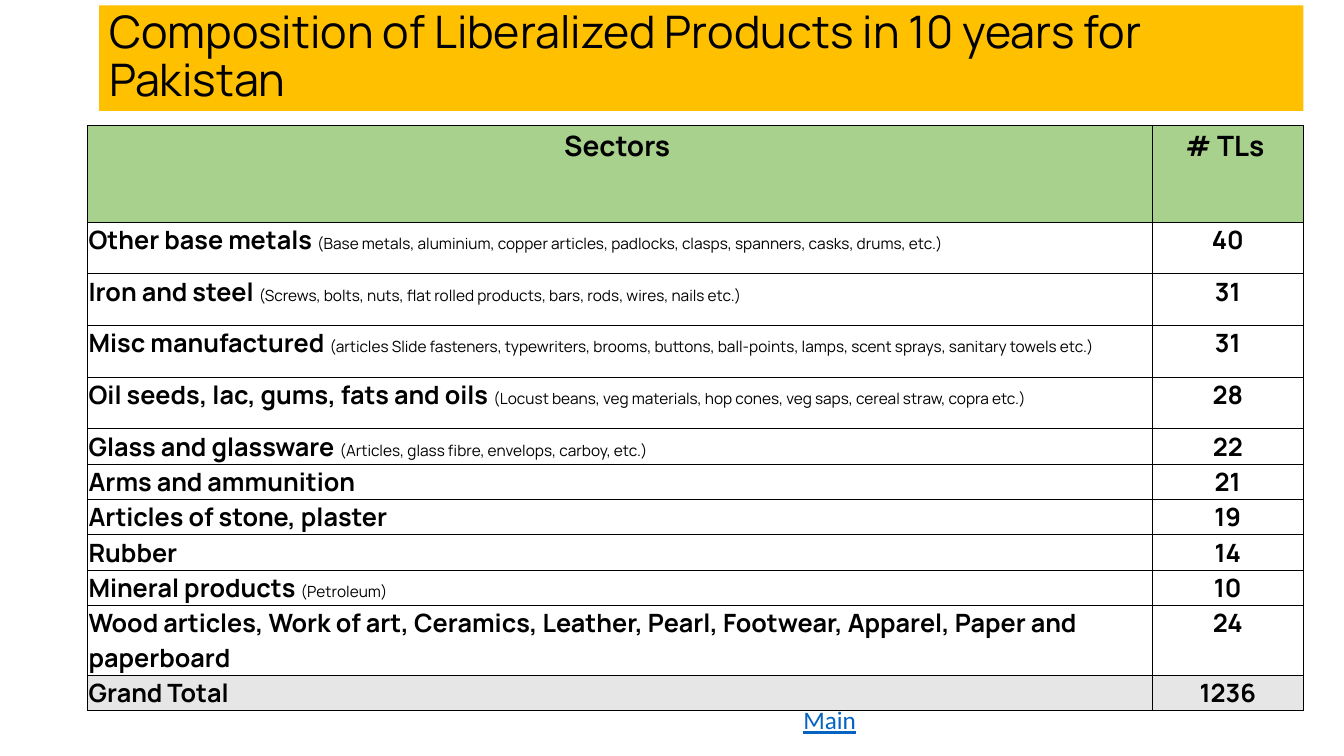
from dataclasses import dataclass

from lxml.etree import SubElement
from pptx import Presentation
from pptx.dml.color import RGBColor
from pptx.enum.shapes import MSO_SHAPE as SHAPE
from pptx.enum.text import MSO_ANCHOR as ANCHOR, MSO_AUTO_SIZE as FIT, PP_ALIGN as ALIGN
from pptx.oxml.ns import qn
from pptx.util import Pt

COLORS = {
    "title": "FFC000",
    "header": "A9D18E",
    "total": "E7E6E6",
    "ink": "000000",
    "link": "0563C1",
}
HEADING, BODY = "Manrope", "Calibri"
TALL, SHORT = 36.9, 23
CELL_FORMAT = {
    "margin_left": Pt(0.6),
    "margin_right": Pt(0.6),
    "margin_top": Pt(0.6),
    "margin_bottom": Pt(0),
    "vertical_anchor": ANCHOR.TOP,
}


@dataclass
class Row:
    sector: str
    lines: str
    detail: str = ""
    height: float = SHORT
    size: float = 18
    fill: str = ""
    align: ALIGN = ALIGN.LEFT


ROWS = [
    Row("Sectors ", "# TLs ", height=69, size=20, fill="header", align=ALIGN.CENTER),
    Row("Other base metals ", "40",
        "(Base metals, aluminium, copper articles, padlocks, clasps, spanners, casks, drums, etc.)", TALL),
    Row("Iron and steel ", "31",
        "(Screws, bolts, nuts, flat rolled products, bars, rods, wires, nails etc.)", TALL),
    Row("Misc manufactured ", "31",
        "(articles Slide fasteners, typewriters, brooms, buttons, ball-points, lamps, "
        "scent sprays, sanitary towels etc.)", TALL),
    Row("Oil seeds, lac, gums, fats and oils ", "28",
        "(Locust beans, veg materials, hop cones, veg saps, cereal straw, copra etc.)", TALL),
    Row("Glass and glassware ", "22", "(Articles, glass fibre, envelops, carboy, etc.)"),
    Row("Arms and ammunition", "21"),
    Row("Articles of stone, plaster", "19"),
    Row("Rubber", "14"),
    Row("Mineral products ", "10", "(Petroleum)"),
    Row("Wood articles, Work of art, Ceramics, Leather, Pearl, Footwear, Apparel, "
        "Paper and paperboard", "24", height=2 * SHORT),
    Row("Grand Total", "1236", fill="total"),
]


def apply(obj, values: dict) -> None:
    for name, value in values.items():
        setattr(obj, name, value)


def rgb(name: str) -> RGBColor:
    return RGBColor.from_string(COLORS[name])


def add_run(p, text: str, size: float, color: str = "ink", **fmt) -> None:
    r = p.add_run()
    r.text = text
    apply(r.font, {"name": HEADING, "size": Pt(size), **fmt})
    r.font.color.rgb = rgb(color)


def add_borders(cell) -> None:
    tcPr = cell._tc.get_or_add_tcPr()
    for i, side in enumerate(("lnL", "lnR", "lnT", "lnB")):
        ln = SubElement(tcPr, qn(f"a:{side}"), w=str(Pt(0.5)))
        fill = SubElement(ln, qn("a:solidFill"))
        SubElement(fill, qn("a:srgbClr"), val=COLORS["ink"])
        tcPr.remove(ln)
        tcPr.insert(i, ln)


def fill_cell(cell, row: Row, text: str, detail: str, align: ALIGN) -> None:
    apply(cell, CELL_FORMAT)
    if row.fill:
        cell.fill.solid()
        cell.fill.fore_color.rgb = rgb(row.fill)
    else:
        cell.fill.background()
    add_borders(cell)
    p = cell.text_frame.paragraphs[0]
    p.alignment = align
    add_run(p, text, row.size, bold=True)
    if detail:
        add_run(p, detail, 11, bold=False)


def add_title(s) -> None:
    sp = s.shapes.add_shape(SHAPE.RECTANGLE, Pt(70.8), Pt(3.8), Pt(860.2), Pt(75.4))
    sp.shadow.inherit = False
    sp.fill.solid()
    sp.fill.fore_color.rgb = rgb("title")
    sp.line.fill.background()
    tf = sp.text_frame
    apply(tf, {"word_wrap": True, "vertical_anchor": ANCHOR.MIDDLE})
    p = tf.paragraphs[0]
    apply(p, {"alignment": ALIGN.LEFT, "line_spacing": 0.9})
    add_run(p, "Composition of Liberalized Products in 10 years for Pakistan", 32)


def add_sectors(s) -> None:
    height = sum(row.height for row in ROWS)
    table = s.shapes.add_table(len(ROWS), 2, Pt(62.7), Pt(89.6), Pt(868.3), Pt(height)).table
    apply(table, {"first_row": False, "horz_banding": False})
    for column, width in zip(table.columns, (760.3, 108)):
        column.width = Pt(width)
    for line, row in zip(table.rows, ROWS):
        line.height = Pt(row.height)
        sector, count = line.cells
        fill_cell(sector, row, row.sector, row.detail, row.align)
        fill_cell(count, row, row.lines, "", ALIGN.CENTER)


def add_main_label(s) -> None:
    tf = s.shapes.add_textbox(Pt(566.8), Pt(499.7), Pt(100), Pt(29)).text_frame
    apply(tf, {"word_wrap": True, "auto_size": FIT.SHAPE_TO_FIT_TEXT})
    add_run(tf.paragraphs[0], "Main", 18, "link", name=BODY, underline=True)


def main() -> None:
    prs = Presentation()
    apply(prs, {"slide_width": Pt(960), "slide_height": Pt(540)})
    s = prs.slides.add_slide(prs.slide_layouts[6])
    add_title(s)
    add_sectors(s)
    add_main_label(s)
    prs.save("out.pptx")


if __name__ == "__main__":
    main()
